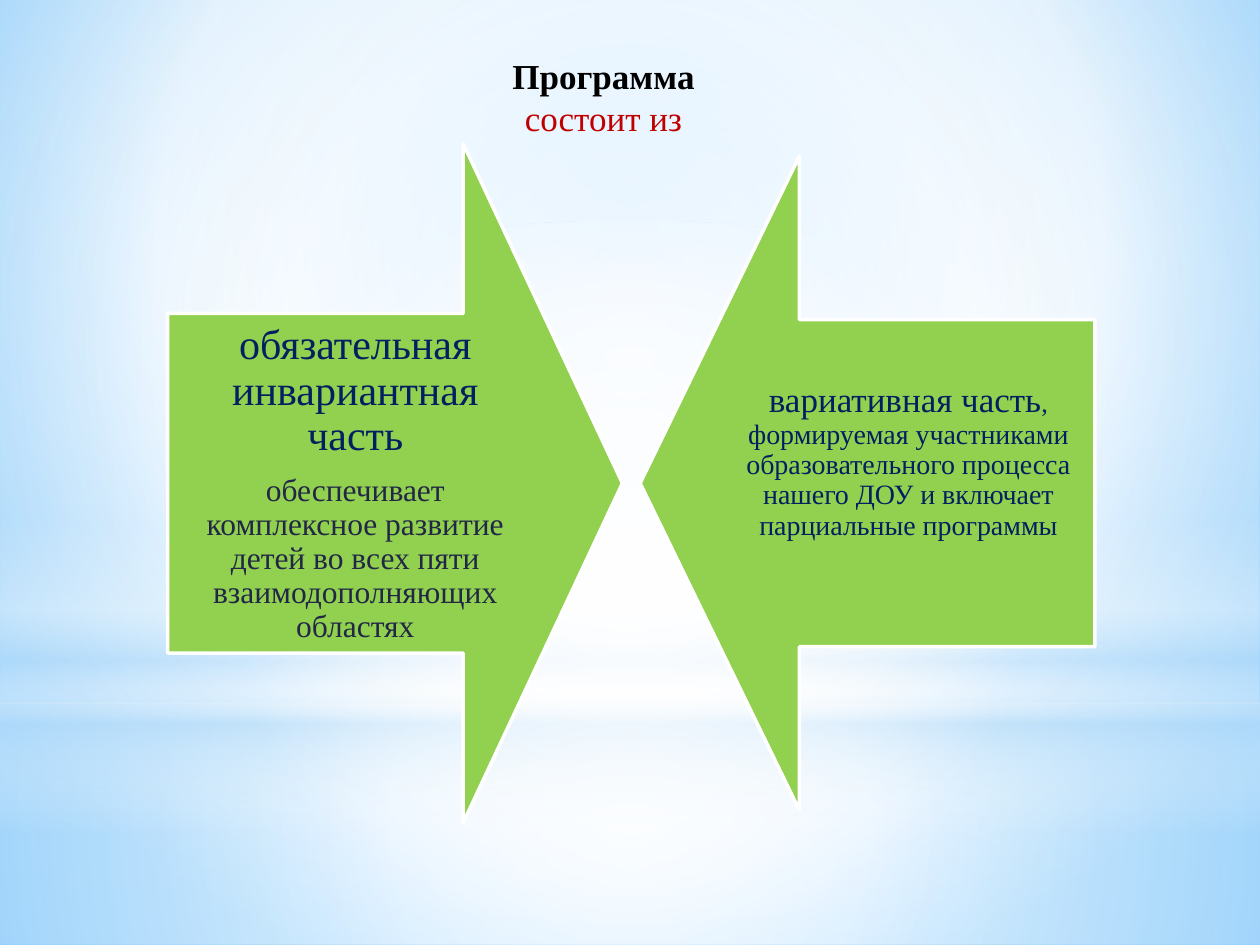
from dataclasses import dataclass

from lxml import etree
from pptx import Presentation
from pptx import util as u
from pptx.dml.color import RGBColor
from pptx.enum import shapes, text
from pptx.oxml import parse_xml
from pptx.oxml.ns import nsdecls, qn


@dataclass(frozen=True)
class Theme:
    font: str = "Times New Roman"
    white: str = "FFFFFF"
    sky: str = "B4DCFA"
    bg_inner: str = "9ED5FF"
    bg_outer: str = "5BB9FF"
    arrow: str = "92D050"
    black: str = "000000"
    red: str = "C00000"
    navy: str = "002060"
    slate: str = "212745"
    heading: int = 24
    title: int = 20
    body: int = 18
    detail: int = 16
    comma: int = 15


T = Theme()
CENTER = (50, 50, 50, 50)


def gradient(stops, focus=None, angle=0):
    gs = "".join(
        f'<a:gs pos="{pos * 1000}"><a:srgbClr val="{color}">'
        f'<a:alpha val="{alpha * 1000}"/></a:srgbClr></a:gs>'
        for pos, color, alpha in stops
    )
    if focus:
        sides = " ".join(f'{k}="{v * 1000}"' for k, v in zip("ltrb", focus))
        way = f'<a:path path="circle"><a:fillToRect {sides}/></a:path>'
    else:
        way = f'<a:lin ang="{angle * 60000}" scaled="0"/>'
    return parse_xml(
        f'<a:gradFill {nsdecls("a")} rotWithShape="1"><a:gsLst>{gs}</a:gsLst>{way}</a:gradFill>'
    )


def set_background(s, grad):
    fill = s.background.fill
    fill.solid()
    fill.fore_color.rgb = RGBColor.from_string(T.white)
    solid = next(s.element.iter(qn("a:solidFill")))
    solid.getparent().replace(solid, grad)


def add_shape(s, kind, box):
    sp = s.shapes.add_shape(kind, *map(u.Inches, box))
    sp.shadow.inherit = False
    return sp


def add_glow(s, kind, top, height, grad):
    sp = add_shape(s, kind, (0, top, 10, height))
    sp.line.fill.background()
    sp.fill.solid()
    solid = sp.element.spPr.find(qn("a:solidFill"))
    solid.getparent().replace(solid, grad)


def add_arrow(s, box, rotation):
    sp = add_shape(s, shapes.MSO_SHAPE.DOWN_ARROW, box)
    sp.rotation = rotation
    sp.adjustments[0], sp.adjustments[1] = 0.5, 0.35
    sp.fill.solid()
    sp.fill.fore_color.rgb = RGBColor.from_string(T.arrow)
    sp.line.color.rgb = RGBColor.from_string(T.white)
    sp.line.width = u.Pt(2)


def add_text(s, box, paragraphs, inset=0.1, bottom=0.05, top=0.05, wrap=True,
             anchor=text.MSO_ANCHOR.MIDDLE, line=1.0, after=0):
    tf = s.shapes.add_textbox(*map(u.Inches, box)).text_frame
    tf.word_wrap = wrap
    tf.vertical_anchor = anchor
    tf.margin_left = tf.margin_right = u.Inches(inset)
    tf.margin_top, tf.margin_bottom = u.Inches(top), u.Inches(bottom)
    for i, (color, bold, runs) in enumerate(paragraphs):
        p = tf.add_paragraph() if i else tf.paragraphs[0]
        p.alignment = text.PP_ALIGN.CENTER
        p.line_spacing = line
        p.space_after = u.Pt(after)
        p.font.name = T.font
        p.font.bold = bold
        p.font.color.rgb = RGBColor.from_string(color)
        for words, size in runs:
            r = p.add_run()
            r.text = words
            r.font.name = T.font
            r.font.bold = bold
            r.font.size = u.Pt(size)
            r.font.color.rgb = RGBColor.from_string(color)


def add_backdrop(s):
    rect, oval = shapes.MSO_SHAPE.RECTANGLE, shapes.MSO_SHAPE.OVAL
    w, b = T.white, T.sky
    set_background(s, gradient(
        [(0, T.bg_inner, 100), (60, w, 100), (100, T.bg_outer, 100)], (20, 10, 20, 60)))
    add_glow(s, rect, 5.58, 1.92, gradient([(0, w, 91), (37, w, 76), (100, b, 79)], CENTER))
    add_glow(s, rect, 0, 5.58, gradient([(0, w, 89), (48, w, 62), (100, b, 79)], CENTER))
    add_glow(s, rect, 4.12, 2.5, gradient(
        [(0, w, 0), (29, w, 30), (45, b, 40), (55, w, 26), (65, b, 60), (100, w, 0)], angle=90))
    add_glow(s, oval, 1.75, 5.58, gradient([(0, w, 100), (56, w, 0)], CENTER))


def main():
    prs = Presentation()
    prs.slide_width, prs.slide_height = u.Inches(10), u.Inches(7.5)
    s = prs.slides.add_slide(prs.slide_layouts[6])
    add_backdrop(s)

    add_arrow(s, (0.44, 2.03, 5.39, 3.61), 270)
    add_text(s, (1.33, 2.49, 2.98, 2.7), [
        (T.navy, False, [("обязательная инвариантная часть", T.heading)]),
        (T.slate, False, [("обеспечивает комплексное развитие детей во всех пяти "
                           "взаимодополняющих областях", T.body)]),
    ], inset=0.19, top=0.19, bottom=0.19, line=0.9, after=8.4)

    add_arrow(s, (4.29, 2.03, 5.19, 3.61), 90)
    add_text(s, (5.72, 2.54, 2.98, 2.6), [
        (T.navy, False, [
            ("вариативная часть", T.title),
            (", ", T.comma),
            ("формируемая участниками образовательного процесса нашего ДОУ "
             "и включает парциальные программы", T.detail),
        ]),
    ], inset=0.16, top=0.16, bottom=0.51, line=0.9)

    add_text(s, (3.96, 0.38, 1.73, 0.77), [
        (T.black, True, [("Программа ", T.title)]),
        (T.red, False, [("состоит из ", T.title)]),
    ], wrap=False, anchor=text.MSO_ANCHOR.TOP)
    prs.save("out.pptx")


if __name__ == "__main__":
    main()
